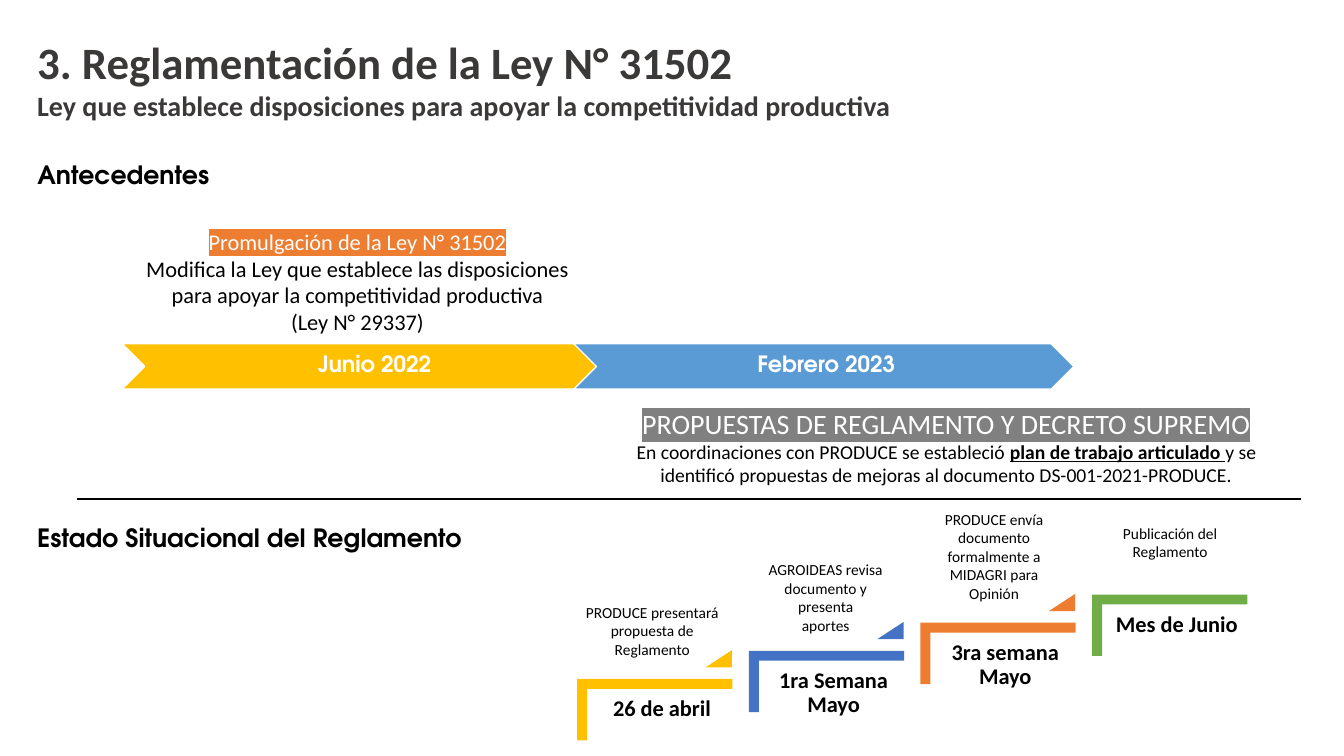
from lxml import etree
from pptx import Presentation
from pptx import util as u
from pptx.dml.color import RGBColor
from pptx.enum import shapes, text
from pptx.oxml.ns import qn

WIDTH, HEIGHT = u.Inches(13.33), u.Inches(7.5)
COLUMN, ROW = WIDTH / 100, HEIGHT / 100

BLACK = RGBColor(0x00, 0x00, 0x00)
WHITE = RGBColor(0xFF, 0xFF, 0xFF)
CHARCOAL = RGBColor(0x3B, 0x38, 0x38)
GREY = RGBColor(0x80, 0x80, 0x80)
GOLD = RGBColor(0xFF, 0xC0, 0x00)
SKY = RGBColor(0x5B, 0x9B, 0xD5)
BLUE = RGBColor(0x44, 0x72, 0xC4)
ORANGE = RGBColor(0xED, 0x7D, 0x31)
GREEN = RGBColor(0x70, 0xAD, 0x47)

BODY, HEADING = "Calibri", "TeX Gyre Adventor"
CENTER, LEFT, JUSTIFY = text.PP_ALIGN.CENTER, text.PP_ALIGN.LEFT, text.PP_ALIGN.JUSTIFY
NORMAL_INSETS = (0.1, 0.05, 0.1, 0.05)

PHASES = [("Junio 2022", GOLD), ("Febrero 2023", SKY)]
# Date, colour, note lines, note area
STEPS = [
    ("26 de abril", GOLD, ["PRODUCE presentará propuesta de Reglamento"],
     (42.76, 79.07, 11.55, 8.8)),
    ("1ra Semana Mayo", BLUE, ["AGROIDEAS revisa documento y presenta", "aportes"],
     (55.89, 73.47, 11.1, 11.2)),
    ("3ra semana Mayo", ORANGE,
     ["PRODUCE envía documento formalmente a MIDAGRI para Opinión"],
     (68.12, 66.8, 11.7, 13.73)),
    ("Mes de Junio", GREEN, ["Publicación del Reglamento"],
     (81.4, 68.67, 11.33, 6.27)),
]


def place(left, top, width, height):
    """Turn columns and rows into slide lengths."""
    return (round(left * COLUMN), round(top * ROW),
            round(width * COLUMN), round(height * ROW))


def highlight(run, color):
    rpr = run.font._element
    mark = etree.Element(qn("a:highlight"))
    etree.SubElement(mark, qn("a:srgbClr")).set("val", str(color))
    rpr.find(qn("a:solidFill")).addnext(mark)


def add_run(paragraph, words, size, color=BLACK, font=BODY, bold=False,
            underline=False, marker=None):
    run = paragraph.add_run()
    run.text = words
    run.font.size = u.Pt(size)
    run.font.name = font
    run.font.bold = bold
    run.font.underline = underline
    run.font.color.rgb = color
    if marker is not None:
        highlight(run, marker)


def write(frame, paragraphs, align=CENTER, insets=NORMAL_INSETS, spacing=None):
    """Fill a text frame; each paragraph is a list of (words, run options)."""
    frame.word_wrap = True
    (frame.margin_left, frame.margin_top,
     frame.margin_right, frame.margin_bottom) = map(u.Inches, insets)
    for index, runs in enumerate(paragraphs):
        paragraph = frame.add_paragraph() if index else frame.paragraphs[0]
        paragraph.alignment = align
        paragraph.line_spacing = spacing
        for words, options in runs:
            add_run(paragraph, words, **options)


def add_text(slide, area, paragraphs, **layout):
    write(slide.shapes.add_textbox(*place(*area)).text_frame, paragraphs, **layout)


def add_heading(slide, area, words):
    style = dict(size=18, font=HEADING, bold=True)
    add_text(slide, area, [[(words, style)]], align=LEFT, insets=(0.01, 0.01, 0, 0))


def paint(solid, color):
    solid.shadow.inherit = False
    solid.fill.solid()
    solid.fill.fore_color.rgb = color
    solid.line.fill.background()
    return solid


def add_solid(slide, kind, area, color):
    return paint(slide.shapes.add_shape(kind, *place(*area)), color)


def add_corner(slide, area, thickness, color):
    """Draw a bar along the top joined to a bar down the left side."""
    left, top, width, height = place(*area)
    right, bottom = left + width, top + height
    inner_left, inner_top = left + thickness, top + thickness
    outline = slide.shapes.build_freeform(left, top)
    outline.add_line_segments([
        (right, top), (right, inner_top), (inner_left, inner_top),
        (inner_left, bottom), (left, bottom),
    ])
    paint(outline.convert_to_shape(), color)


def add_phase(slide, index, words, color):
    chevron = add_solid(slide, shapes.MSO_SHAPE.CHEVRON,
                        (9.08 + 33.61 * index, 45.47, 37.21, 6), color)
    chevron.line.color.rgb = WHITE
    chevron.line.width = u.Pt(1)
    chevron.text_frame.vertical_anchor = text.MSO_ANCHOR.MIDDLE
    style = dict(size=16, color=WHITE, font=HEADING, bold=True)
    write(chevron.text_frame, [[(words, style)]],
          insets=(0.07, 0.02, 0.02, 0.05), spacing=0.9)


def add_step(slide, index, date, color, note, note_area):
    """Draw one stair: corner, date below, note above, rise marker if not last."""
    across, up = 12.77 * index, 3.72 * index
    add_corner(slide, (42.95 + across, 89.8 - up, 11.55, 8.13),
               round(0.74 * COLUMN), color)
    add_text(slide, (44.04 + across, 91.07 - up, 10.43, 10.8),
             [[(date, dict(size=16, bold=True))]], insets=(0.09,) * 4, spacing=0.9)
    if index < len(STEPS) - 1:
        rise = add_solid(slide, shapes.MSO_SHAPE.ISOSCELES_TRIANGLE,
                         (52.51 + across, 86 - up, 1.95, 2.27), color)
        rise.adjustments[0] = 1
    add_text(slide, note_area, [[(line, dict(size=11))] for line in note])


def add_divider(slide):
    left, top, width, _ = place(5.7, 66, 91.07, 0)
    divider = slide.shapes.add_connector(
        shapes.MSO_CONNECTOR.STRAIGHT, left, top, left + width, top)
    divider.line.color.rgb = BLACK
    divider.line.width = u.Pt(1.5)
    etree.SubElement(divider._element.spPr, qn("a:effectLst"))


def main():
    deck = Presentation()
    deck.slide_width, deck.slide_height = WIDTH, HEIGHT
    slide = deck.slides.add_slide(deck.slide_layouts[6])

    add_text(slide, (2.03, 4, 95.35, 13.07), [
        [("3. Reglamentación de la Ley N° 31502",
          dict(size=32, color=CHARCOAL, bold=True))],
        [("Ley que establece disposiciones para apoyar la competitividad productiva",
          dict(size=20, color=CHARCOAL, bold=True))],
    ], align=JUSTIFY)

    add_heading(slide, (2.7, 20.93, 20.4, 4.27), "Antecedentes")
    for index, phase in enumerate(PHASES):
        add_phase(slide, index, *phase)
    add_text(slide, (9.08, 29.47, 35.03, 15.73), [
        [("Promulgación de la Ley N° 31502",
          dict(size=16, color=WHITE, marker=ORANGE))],
        [("Modifica la Ley que establece las disposiciones para apoyar la "
          "competitividad productiva", dict(size=16))],
        [("(Ley N° 29337)", dict(size=16))],
    ])
    add_text(slide, (44.04, 53.07, 52.74, 12.13), [
        [("PROPUESTAS DE REGLAMENTO Y DECRETO SUPREMO",
          dict(size=20, color=WHITE, marker=GREY))],
        [("En coordinaciones con PRODUCE se estableció ", dict(size=14)),
         ("plan de trabajo articulado ", dict(size=14, bold=True, underline=True)),
         ("y se identificó propuestas de mejoras al documento "
          "DS-001-2021-PRODUCE.", dict(size=14))],
    ])

    add_divider(slide)
    add_heading(slide, (2.7, 68.93, 37.06, 4.27), "Estado Situacional del Reglamento")
    for index, step in enumerate(STEPS):
        add_step(slide, index, *step)

    deck.save("out.pptx")


if __name__ == "__main__":
    main()
